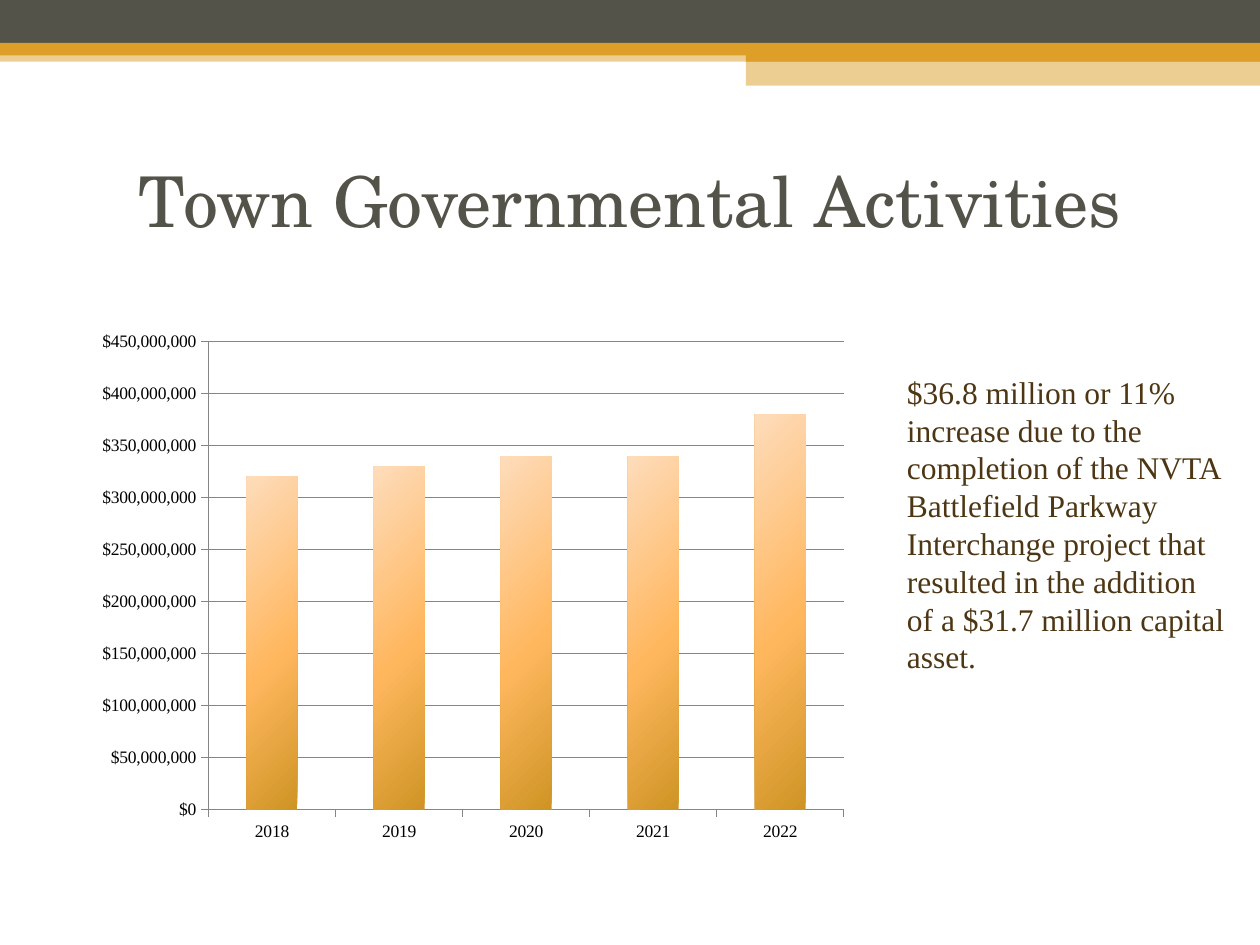
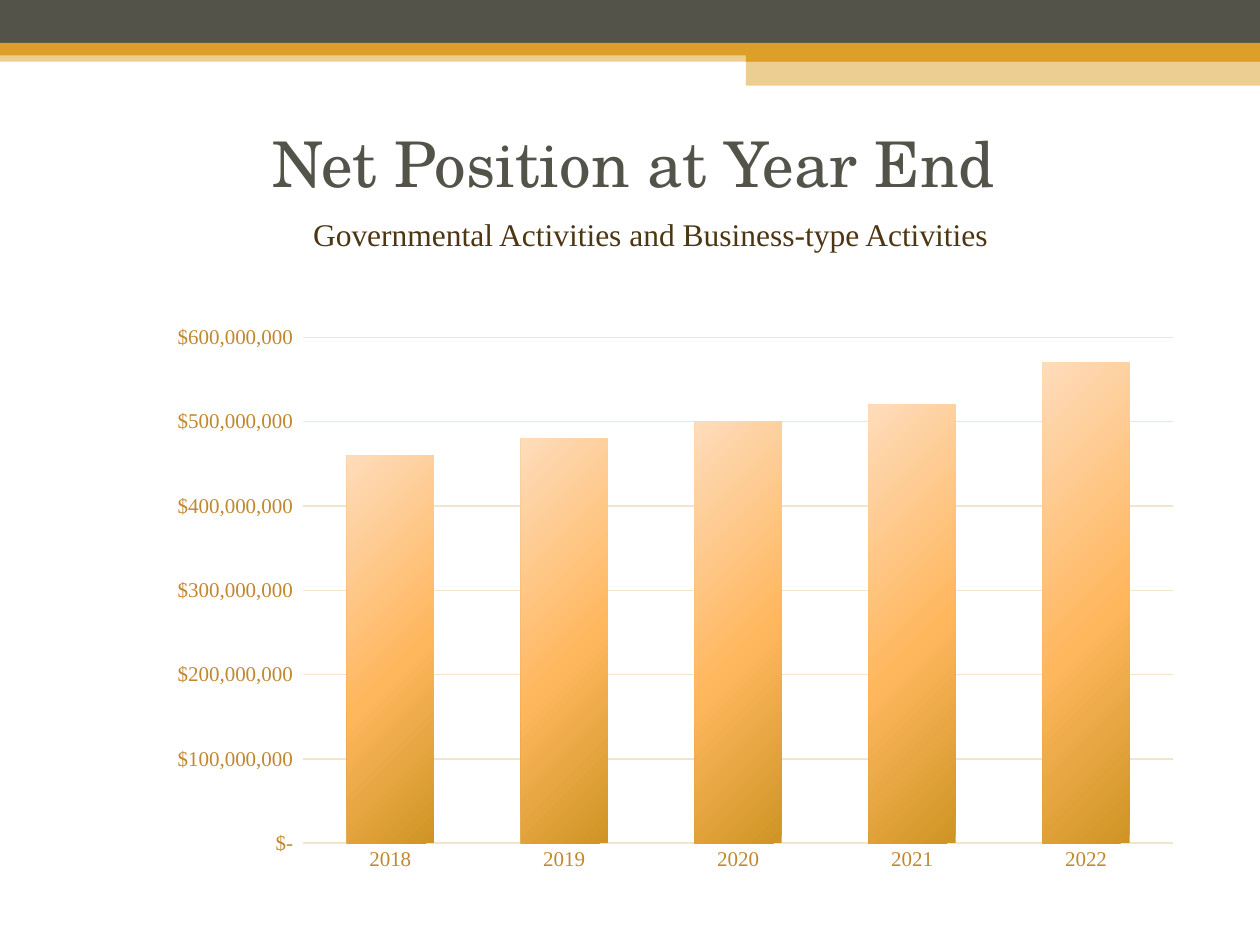
from dataclasses import dataclass
from typing import Optional

from lxml import etree
from pptx import Presentation
from pptx.chart.axis import CategoryAxis, ValueAxis
from pptx.chart.chart import Chart
from pptx.chart.data import CategoryChartData
from pptx.chart.series import BarSeries
from pptx.dml.color import RGBColor
from pptx.dml.line import LineFormat
from pptx.enum.chart import XL_CHART_TYPE as ChartType
from pptx.enum.chart import XL_TICK_LABEL_POSITION as LabelPosition
from pptx.enum.chart import XL_TICK_MARK as TickMark
from pptx.enum.shapes import MSO_SHAPE as Preset
from pptx.enum.text import MSO_ANCHOR as Anchor
from pptx.enum.text import PP_ALIGN as Align
from pptx.oxml import parse_xml
from pptx.oxml.ns import nsdecls, qn
from pptx.slide import Slide
from pptx.util import Inches, Pt

SLATE = RGBColor(0x54, 0x53, 0x4A)
AMBER = RGBColor(0xDD, 0x9F, 0x27)
BROWN = RGBColor(0x4D, 0x36, 0x13)
BRONZE = RGBColor(0xC1, 0x88, 0x30)
CREAM = RGBColor(0xF3, 0xE4, 0xCD)
GRAY = RGBColor(0x86, 0x86, 0x86)
BLACK = RGBColor(0, 0, 0)

TITLE_FONT = "TeX Gyre Schola"
BODY_FONT = "Times New Roman"
YEARS = ("2018", "2019", "2020", "2021", "2022")
MILLION = 1_000_000
BAR_GRADIENT = ((0, "FEDCBB"), (55, "FFB75E"), (100, "CE9424"))

Box = tuple[float, float, float, float]


@dataclass(frozen=True)
class Band:
    box: Box
    color: RGBColor
    opacity: int = 100


@dataclass(frozen=True)
class TextStyle:
    font: str
    size: int
    color: RGBColor
    align: Align = Align.LEFT
    anchor: Anchor = Anchor.TOP


@dataclass(frozen=True)
class ColumnChart:
    box: Box
    plot: Box
    millions: tuple[int, ...]
    maximum: int
    step: int
    number_format: str
    label_size: int
    label_color: RGBColor
    line_color: RGBColor
    category_line_width: float
    value_line: bool
    tick_mark: TickMark
    label_position: LabelPosition
    gap_width: int
    overlap: Optional[int] = None


BANDS = (
    Band((0, 0.4, 10, 0.09), AMBER, 50),
    Band((0, 0, 10, 0.34), SLATE),
    Band((0, 0.34, 10, 0.1), AMBER),
    Band((5.92, 0.39, 4.08, 0.1), AMBER),
    Band((5.92, 0.48, 4.08, 0.2), AMBER, 50),
)

NOTE = TextStyle(BODY_FONT, 18, BROWN)
SUBTITLE = TextStyle(BODY_FONT, 18, BROWN, Align.CENTER)

GOVERNMENTAL_CHART = ColumnChart(
    box=(0.5, 2.17, 6.6, 5.02),
    plot=(0.175, 0.108, 0.764, 0.74),
    millions=(320, 330, 340, 340, 380),
    maximum=450,
    step=50,
    number_format="\\$#,##0",
    label_size=10,
    label_color=BLACK,
    line_color=GRAY,
    category_line_width=0.75,
    value_line=True,
    tick_mark=TickMark.OUTSIDE,
    label_position=LabelPosition.LOW,
    gap_width=150,
)

NET_POSITION_CHART = ColumnChart(
    box=(0.5, 2.46, 9, 4.73),
    plot=(0.212, 0.046, 0.767, 0.849),
    millions=(460, 480, 500, 520, 570),
    maximum=600,
    step=100,
    number_format='_("$"* #,##0_);_("$"* \\(#,##0\\);_("$"* "-"_);_(@_)',
    label_size=12,
    label_color=BRONZE,
    line_color=CREAM,
    category_line_width=1,
    value_line=False,
    tick_mark=TickMark.NONE,
    label_position=LabelPosition.NEXT_TO_AXIS,
    gap_width=100,
    overlap=-24,
)


def add_band(slide: Slide, band: Band) -> None:
    shape = slide.shapes.add_shape(Preset.RECTANGLE, *map(Inches, band.box))
    shape.shadow.inherit = False
    shape.line.fill.background()
    shape.fill.solid()
    shape.fill.fore_color.rgb = band.color
    if band.opacity < 100:
        color = shape.fill._xPr.find(qn("a:solidFill"))[0]
        etree.SubElement(color, qn("a:alpha"), val=str(band.opacity * 1000))


def add_text(slide: Slide, box: Box, text: str, style: TextStyle) -> None:
    frame = slide.shapes.add_textbox(*map(Inches, box)).text_frame
    frame.word_wrap = True
    frame.vertical_anchor = style.anchor
    frame.text = text
    paragraph = frame.paragraphs[0]
    paragraph.alignment = style.align
    font = paragraph.runs[0].font
    font.name = style.font
    font.size = Pt(style.size)
    font.color.rgb = style.color


def set_line(line: LineFormat, color: RGBColor, width: float) -> None:
    line.color.rgb = color
    line.width = Pt(width)


def set_plot_area(chart: Chart, plot: Box) -> None:
    """Place the inner plot area, in fractions of the chart's size."""
    places = "".join(
        f'<c:{name} val="{value}"/>' for name, value in zip("xywh", plot)
    )
    layout = parse_xml(
        f'<c:layout {nsdecls("c")}><c:manualLayout><c:layoutTarget val="inner"/>'
        f'<c:xMode val="edge"/><c:yMode val="edge"/>{places}'
        "</c:manualLayout></c:layout>"
    )
    plot_area = chart._chartSpace.chart.plotArea
    for previous in plot_area.findall(qn("c:layout")):
        plot_area.remove(previous)
    plot_area.insert(0, layout)


def fill_bars(series: BarSeries) -> None:
    """Give the bars a circular gradient that spreads beyond their edges."""
    series.format.fill.solid()
    solid = series.format.fill._xPr.find(qn("a:solidFill"))
    stops = "".join(
        f'<a:gs pos="{percent * 1000}"><a:srgbClr val="{color}"/></a:gs>'
        for percent, color in BAR_GRADIENT
    )
    gradient = parse_xml(
        f'<a:gradFill {nsdecls("a")} rotWithShape="1"><a:gsLst>{stops}</a:gsLst>'
        '<a:path path="circle"><a:fillToRect l="-40000" t="-90000" '
        'r="140000" b="190000"/></a:path></a:gradFill>'
    )
    solid.getparent().replace(solid, gradient)


def style_axis(axis: CategoryAxis | ValueAxis, design: ColumnChart) -> None:
    axis.major_tick_mark = design.tick_mark
    axis.minor_tick_mark = TickMark.NONE
    font = axis.tick_labels.font
    font.name = BODY_FONT
    font.size = Pt(design.label_size)
    font.color.rgb = design.label_color


def add_column_chart(slide: Slide, design: ColumnChart) -> None:
    data = CategoryChartData()
    data.categories = YEARS
    data.add_series("Series 1", [value * MILLION for value in design.millions])
    frame = slide.shapes.add_chart(
        ChartType.COLUMN_CLUSTERED, *map(Inches, design.box), data
    )
    chart = frame.chart
    chart.has_title = False
    chart.has_legend = False
    chart.font.name = BODY_FONT
    chart.font.size = Pt(10)
    set_plot_area(chart, design.plot)

    plot = chart.plots[0]
    plot.vary_by_categories = False
    plot.gap_width = design.gap_width
    if design.overlap is not None:
        plot.overlap = design.overlap
    fill_bars(plot.series[0])

    years = chart.category_axis
    style_axis(years, design)
    years.tick_label_position = design.label_position
    set_line(years.format.line, design.line_color, design.category_line_width)

    dollars = chart.value_axis
    style_axis(dollars, design)
    dollars.minimum_scale = 0
    dollars.maximum_scale = design.maximum * MILLION
    dollars.major_unit = design.step * MILLION
    dollars.tick_labels.number_format = design.number_format
    dollars.tick_labels.number_format_is_linked = False
    dollars.has_major_gridlines = True
    set_line(dollars.major_gridlines.format.line, design.line_color, 0.75)
    if design.value_line:
        set_line(dollars.format.line, design.line_color, 0.75)
    else:
        dollars.format.line.fill.background()


def add_titled_slide(
    presentation: Presentation, title: str, box: Box, size: int
) -> Slide:
    slide = presentation.slides.add_slide(presentation.slide_layouts[6])
    for band in BANDS:
        add_band(slide, band)
    style = TextStyle(TITLE_FONT, size, SLATE, Align.CENTER, Anchor.MIDDLE)
    add_text(slide, box, title, style)
    return slide


def main() -> None:
    presentation = Presentation()
    presentation.slide_width = Inches(10)
    presentation.slide_height = Inches(7.5)

    slide = add_titled_slide(
        presentation, "Town Governmental Activities", (0.5, 1, 9, 1.17), 40
    )
    add_column_chart(slide, GOVERNMENTAL_CHART)
    add_text(
        slide,
        (7.1, 2.91, 2.73, 2.52),
        "$36.8 million or 11% increase due to the completion of the NVTA "
        "Battlefield Parkway Interchange project that resulted in the addition "
        "of a $31.7 million capital asset.",
        NOTE,
    )

    slide = add_titled_slide(
        presentation, "Net Position at Year End", (0.53, 0.91, 9, 0.75), 36
    )
    add_column_chart(slide, NET_POSITION_CHART)
    add_text(
        slide,
        (1, 1.66, 8.33, 0.4),
        "Governmental Activities and Business-type Activities",
        SUBTITLE,
    )

    presentation.save("out.pptx")


if __name__ == "__main__":
    main()
